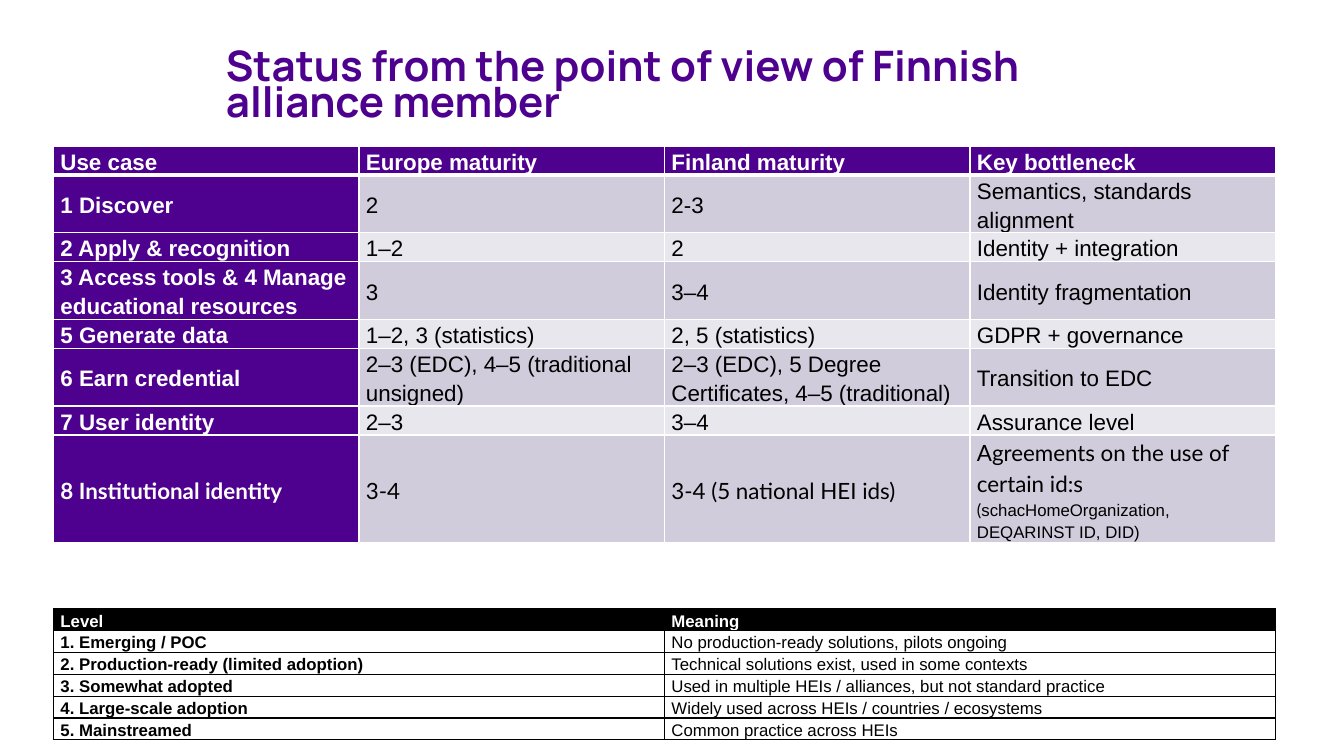
from pptx import Presentation
from pptx.dml.color import RGBColor
from pptx.enum.text import MSO_ANCHOR, MSO_AUTO_SIZE, PP_ALIGN
from pptx.oxml import parse_xml
from pptx.oxml.ns import nsdecls
from pptx.util import Inches, Pt

COLORS = {
    "purple": "4E008E",
    "dark_band": "D0CCDB",
    "light_band": "E9E7EE",
    "white": "FFFFFF",
    "black": "000000",
}

MATURITY_ROWS = [
    ["Use case", "Europe maturity", "Finland maturity", "Key bottleneck"],
    ["1 Discover", "2", "2-3", "Semantics, standards alignment"],
    ["2 Apply & recognition", "1–2", "2", "Identity + integration"],
    ["3 Access tools & 4 Manage educational resources", "3", "3–4",
     "Identity fragmentation"],
    ["5 Generate data", "1–2, 3 (statistics)", "2, 5 (statistics)",
     "GDPR + governance"],
    ["6 Earn credential", "2–3 (EDC), 4–5 (traditional unsigned)",
     "2–3 (EDC), 5 Degree Certificates, 4–5 (traditional)",
     "Transition to EDC"],
    ["7 User identity", "2–3", "3–4", "Assurance level"],
    ["8 Institutional identity", "3-4", "3-4 (5 national HEI ids)",
     "Agreements on the use of certain id:s "],
]
MATURITY_HEIGHTS = [0.28, 0.57, 0.28, 0.57, 0.28, 0.57, 0.28, 1.06]

LEVEL_ROWS = [
    ["Level", "Meaning"],
    ["1. Emerging / POC", "No production-ready solutions, pilots ongoing"],
    ["2. Production-ready (limited adoption)",
     "Technical solutions exist, used in some contexts"],
    ["3. Somewhat adopted",
     "Used in multiple HEIs / alliances, but not standard practice"],
    ["4. Large-scale adoption",
     "Widely used across HEIs / countries / ecosystems"],
    ["5. Mainstreamed", "Common practice across HEIs"],
]
LEVEL_HEIGHTS = [0.21] * len(LEVEL_ROWS)


def color(name):
    return RGBColor.from_string(COLORS[name])


def set_font(font, face, size, color_name, bold):
    font.name = face
    font.size = Pt(size)
    font.bold = bold
    font.color.rgb = color(color_name)


def add_title(page, text):
    title = page.shapes.title
    title.left, title.top = Inches(2.14), Inches(0.41)
    title.width, title.height = Inches(9.54), Inches(0.94)
    frame = title.text_frame
    frame.text = text
    frame.word_wrap = True
    frame.auto_size = MSO_AUTO_SIZE.TEXT_TO_FIT_SHAPE
    frame.vertical_anchor = MSO_ANCHOR.MIDDLE
    para = frame.paragraphs[0]
    para.alignment = PP_ALIGN.LEFT
    para.line_spacing = 0.9
    set_font(para.font, "Manrope", 32, "purple", True)


def set_borders(cell, color_name, widths):
    """Draw left, right, top and bottom borders, widths in points."""
    properties = cell._tc.get_or_add_tcPr()
    for index, (side, width) in enumerate(zip("LRTB", widths)):
        properties.insert(index, parse_xml(
            f'<a:ln{side} {nsdecls("a")} w="{Pt(width)}"><a:solidFill>'
            f'<a:srgbClr val="{COLORS[color_name]}"/></a:solidFill></a:ln{side}>'))


def fill_cell(cell, text, face, size, text_color, bold, fill):
    cell.margin_left = cell.margin_right = Inches(0.07)
    cell.margin_top = cell.margin_bottom = 0
    cell.vertical_anchor = MSO_ANCHOR.MIDDLE
    cell.fill.solid()
    cell.fill.fore_color.rgb = color(fill)
    cell.text = text
    para = cell.text_frame.paragraphs[0]
    para.line_spacing = 1.16
    para.space_after = Pt(8)
    set_font(para.font, face, size, text_color, bold)


def add_grid(page, top, rows, heights):
    table = page.shapes.add_table(
        len(rows), len(rows[0]), Inches(0.53), Inches(top),
        Inches(12.12), Inches(sum(heights))).table
    for row, height in zip(table.rows, heights):
        row.height = Inches(height)
    return table


def add_maturity_table(page):
    table = add_grid(page, 1.45, MATURITY_ROWS, MATURITY_HEIGHTS)
    last = len(MATURITY_ROWS) - 1
    for r, row in enumerate(MATURITY_ROWS):
        face = "Lato" if r == last else "Arial"
        band = "dark_band" if r % 2 else "light_band"
        for c, text in enumerate(row):
            heading = r == 0 or c == 0
            fill_cell(table.cell(r, c), text, face, 16,
                      "white" if heading else "black", heading,
                      "purple" if heading else band)
            set_borders(table.cell(r, c), "white",
                        [1, 1, 3 if r == 1 else 1, 3 if r == 0 else 1])
    # Smaller identifiers after the last bottleneck
    para = table.cell(last, 3).text_frame.paragraphs[0]
    for text, face in [("(", "Lato"),
                       ("schacHomeOrganization, DEQARINST ID, DID)", "Arial")]:
        span = para.add_run()
        span.text = text
        span.font.name = face
        span.font.size = Pt(12)


def add_level_table(page):
    table = add_grid(page, 6.04, LEVEL_ROWS, LEVEL_HEIGHTS)
    for r, row in enumerate(LEVEL_ROWS):
        for c, text in enumerate(row):
            header = r == 0
            fill_cell(table.cell(r, c), text, "Arial", 12,
                      "white" if header else "black", header or c == 0,
                      "black" if header else "white")
            set_borders(table.cell(r, c), "black", [1] * 4)


def main():
    deck = Presentation()
    deck.slide_width, deck.slide_height = Inches(13.33), Inches(7.5)
    page = deck.slides.add_slide(deck.slide_layouts[5])
    add_title(page, "Status from the point of view of Finnish alliance member")
    add_maturity_table(page)
    add_level_table(page)
    deck.save("out.pptx")


if __name__ == "__main__":
    main()
